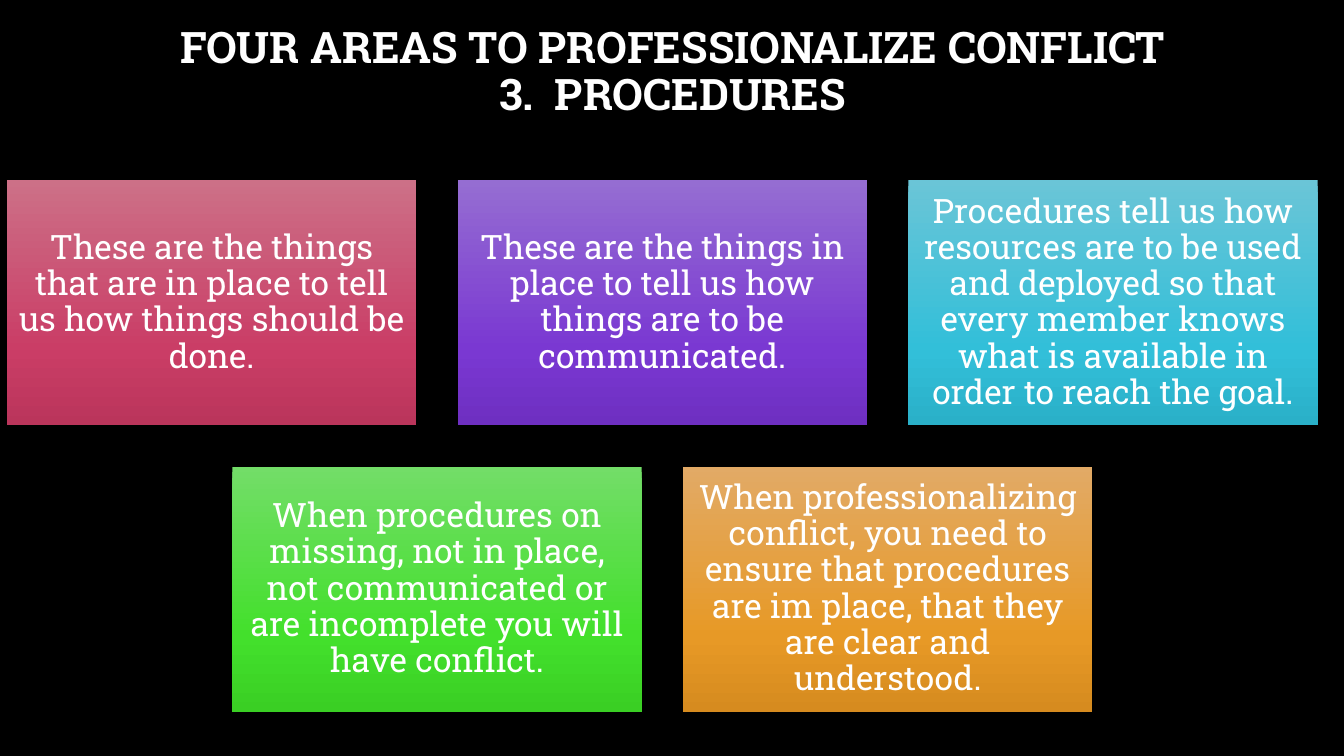
"""Build the slide on procedures as an area for professionalizing conflict."""
from copy import deepcopy

from pptx import Presentation
from pptx.dml.color import RGBColor
from pptx.enum.shapes import MSO_SHAPE
from pptx.enum.text import MSO_ANCHOR, PP_ALIGN
from pptx.util import Inches, Pt

TITLE = "FOUR AREAS TO PROFESSIONALIZE CONFLICT\v3.  PROCEDURES"
CARDS = [
    ("These are the things that are in place to tell us how things should be done.",
     ("CC7087", "CA3D66", "BA355B")),
    ("These are the things in place to tell us how things are to be communicated.",
     ("956DD2", "7A38D2", "6E2FC1")),
    ("Procedures tell us how resources are to be used and deployed so that every "
     "member knows what is available in order to reach the goal.",
     ("6AC5D7", "32BFD9", "2AB0C8")),
    ("When procedures on missing, not in place, not communicated or are incomplete "
     "you will have conflict.",
     ("73DD68", "43E02C", "3ACF24")),
    ("When professionalizing conflict, you need to ensure that procedures are im "
     "place, that they are clear and understood.",
     ("E2AA66", "E79926", "D68B1F")),
]
STOPS = (0, 0.69, 1)
BLACK = RGBColor(0, 0, 0)
WHITE = RGBColor(255, 255, 255)
FONT = "Roboto Slab"
COLUMNS = 3
LEFT, TOP = 0.07, 1.79
CARD_W, CARD_H, GAP = 4.06, 2.43, 0.41


def write(s, text, inset, **font):
    tf = s.text_frame
    frame = {"word_wrap": True, "vertical_anchor": MSO_ANCHOR.MIDDLE}
    for side in ("left", "top", "right", "bottom"):
        frame["margin_" + side] = Inches(inset)
    for name, value in frame.items():
        setattr(tf, name, value)
    p = tf.paragraphs[0]
    p.text = text
    p.alignment = PP_ALIGN.CENTER
    p.line_spacing = 0.9
    for r in p.runs:
        r.font.color.rgb = WHITE
        for name, value in {"name": FONT, **font}.items():
            setattr(r.font, name, value)


def shade(fill, colors):
    fill.gradient()
    fill.gradient_angle = 270
    last = fill.gradient_stops[1]._gs
    last.addnext(deepcopy(last))
    for stop, position, color in zip(fill.gradient_stops, STOPS, colors):
        stop.position = position
        stop.color.rgb = RGBColor.from_string(color)


def main():
    prs = Presentation()
    prs.slide_width, prs.slide_height = Inches(13.33), Inches(7.5)
    slide = prs.slides.add_slide(prs.slide_layouts[6])
    slide.background.fill.solid()
    slide.background.fill.fore_color.rgb = BLACK

    title = slide.shapes.add_textbox(Inches(1.01), 0, Inches(11.32), Inches(1.45))
    write(title, TITLE, 0.05, size=Pt(31), bold=True)

    for i, (text, colors) in enumerate(CARDS):
        row, col = divmod(i, COLUMNS)
        in_row = min(COLUMNS, len(CARDS) - row * COLUMNS)
        x = LEFT + (col + (COLUMNS - in_row) / 2) * (CARD_W + GAP)
        y = TOP + row * (CARD_H + GAP)
        s = slide.shapes.add_shape(MSO_SHAPE.RECTANGLE, Inches(x), Inches(y),
                                   Inches(CARD_W), Inches(CARD_H))
        s.shadow.inherit = False
        s.line.fill.background()
        shade(s.fill, colors)
        write(s, text, 0.1, size=Pt(24))

    prs.save("out.pptx")


if __name__ == "__main__":
    main()
